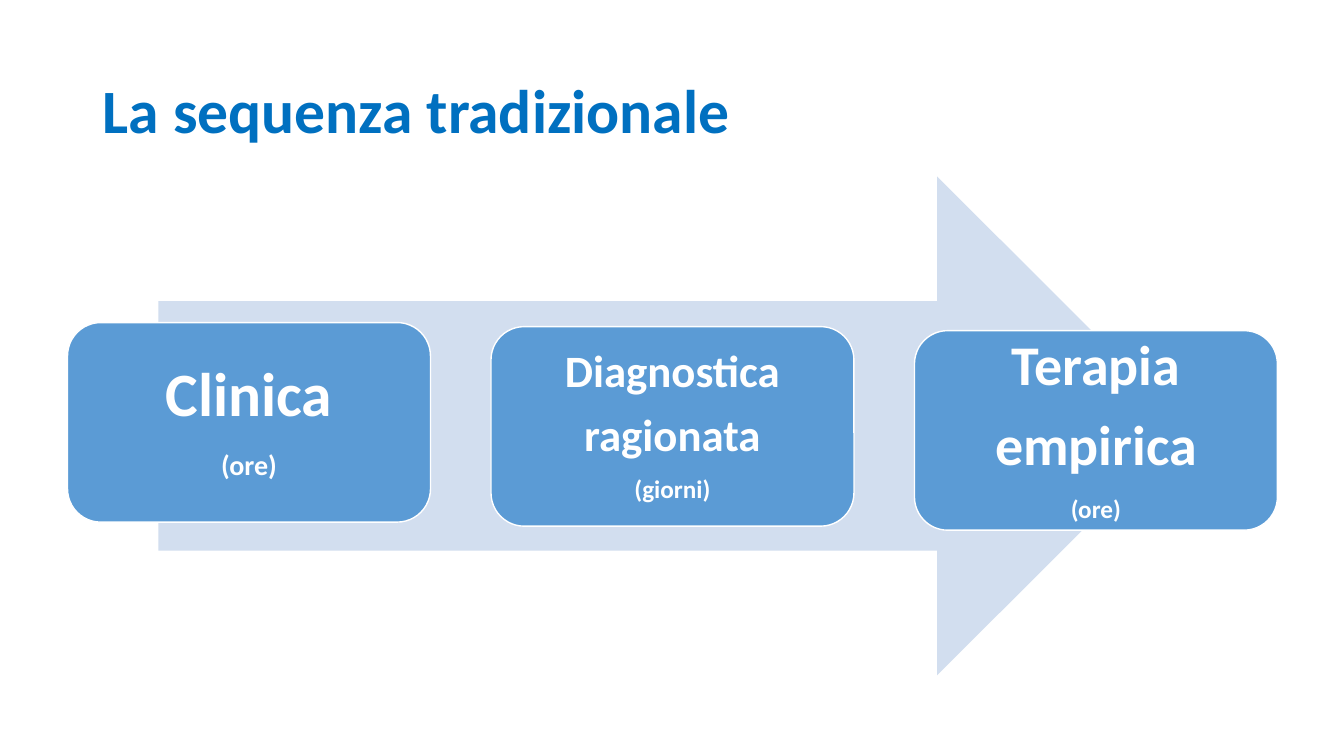
from dataclasses import dataclass

from pptx import Presentation
from pptx.dml.color import RGBColor
from pptx.enum.shapes import MSO_SHAPE as Preset
from pptx.enum.text import MSO_ANCHOR as Anchor, PP_ALIGN as Align
from pptx.shapes.autoshape import Shape
from pptx.slide import Slide
from pptx.text.text import TextFrame
from pptx.util import Emu, Pt

EMU_PER_PX = 9144
FIRST_LEFT, FIRST_TOP = 67, 320
STEP_RIGHT, STEP_DOWN = 420, 4
STAGE_WIDTH, STAGE_HEIGHT = 360, 198


@dataclass
class Stage:
    lines: list[str]
    duration: str
    size: int
    duration_size: int
    inset: int


STAGES = [
    Stage(["Clinica"], "(ore)", 44, 20, 18),
    Stage(["Diagnostica", "ragionata"], "(giorni)", 32, 18, 13),
    Stage(["Terapia", "empirica"], "(ore)", 40, 18, 17),
]


def px(length: int) -> Emu:
    return Emu(length * EMU_PER_PX)


def colour(value: str) -> RGBColor:
    return RGBColor.from_string(value)


def write(frame: TextFrame, text: str, *, size: int, ink: str,
          align: Align = Align.LEFT, after: float = 0, new: bool = False) -> None:
    para = frame.add_paragraph() if new else frame.paragraphs[0]
    para.alignment = align
    para.line_spacing = 0.9
    para.space_after = Pt(after)
    span = para.add_run()
    span.text = text
    span.font.name = "Calibri"
    span.font.size = Pt(size)
    span.font.bold = True
    span.font.color.rgb = colour(ink)


def add_box(slide: Slide, preset: Preset, left: int, top: int, width: int,
            height: int, fill: str, line: str | None = None) -> Shape:
    box = slide.shapes.add_shape(preset, px(left), px(top), px(width), px(height))
    box.shadow.inherit = False
    box.fill.solid()
    box.fill.fore_color.rgb = colour(fill)
    if line:
        box.line.color.rgb = colour(line)
        box.line.width = Pt(1)
    else:
        box.line.fill.background()
    return box


def add_title(slide: Slide, text: str) -> None:
    title = slide.shapes.title
    title.left, title.top = px(92), px(40)
    title.width, title.height = px(1150), px(145)
    title.text_frame.vertical_anchor = Anchor.MIDDLE
    write(title.text_frame, text, size=44, ink="0070C0")


def add_stage(slide: Slide, index: int, stage: Stage) -> None:
    box = add_box(slide, Preset.ROUNDED_RECTANGLE,
                  FIRST_LEFT + index * STEP_RIGHT, FIRST_TOP + index * STEP_DOWN,
                  STAGE_WIDTH, STAGE_HEIGHT, "5B9BD5", "FFFFFF")
    frame = box.text_frame
    frame.word_wrap = True
    frame.vertical_anchor = Anchor.MIDDLE
    frame.margin_left = frame.margin_right = px(stage.inset)
    frame.margin_top = frame.margin_bottom = px(stage.inset)
    rows = [(line, stage.size) for line in stage.lines]
    rows.append((stage.duration, stage.duration_size))
    for number, (text, size) in enumerate(rows):
        write(frame, text, size=size, ink="FFFFFF", align=Align.CENTER,
              after=0.35 * size, new=number > 0)


def main() -> None:
    deck = Presentation()
    deck.slide_width, deck.slide_height = px(1333), px(750)
    slide = deck.slides.add_slide(deck.slide_layouts.get_by_name("Title Only"))
    add_title(slide, "La sequenza tradizionale")
    add_box(slide, Preset.RIGHT_ARROW, 157, 175, 1020, 495, "D2DEEF")
    for index, stage in enumerate(STAGES):
        add_stage(slide, index, stage)
    deck.save("out.pptx")


if __name__ == "__main__":
    main()
